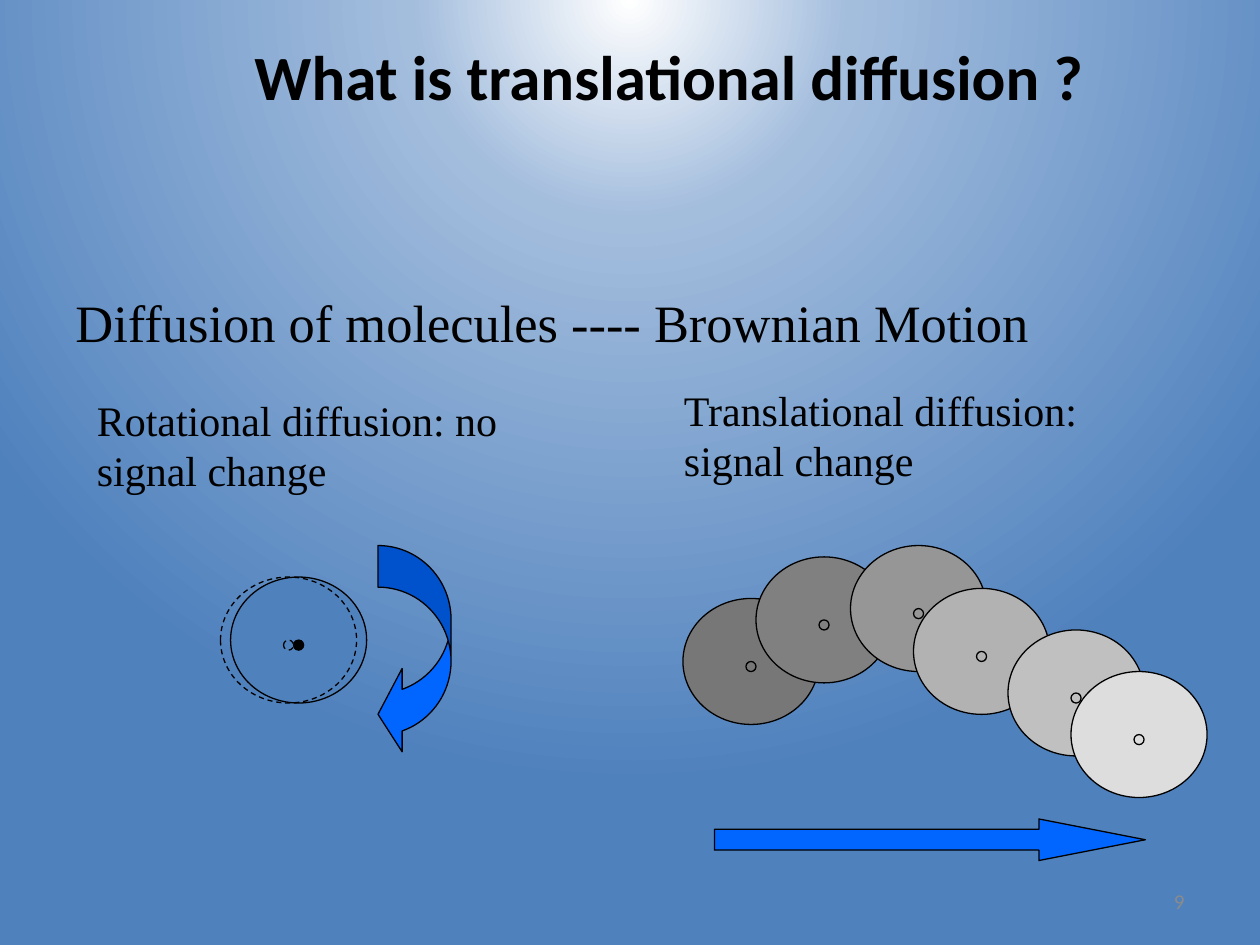
from pptx import Presentation
from pptx.dml.color import RGBColor
from pptx.enum.dml import MSO_LINE
from pptx.enum.shapes import MSO_SHAPE
from pptx.enum.text import MSO_ANCHOR, PP_ALIGN
from pptx.oxml import parse_xml
from pptx.oxml.ns import nsdecls
from pptx.util import Inches, Pt

ELLIPSE = MSO_SHAPE.OVAL
RIGHT_ARROW = MSO_SHAPE.RIGHT_ARROW
CURVED_ARROW = MSO_SHAPE.CURVED_LEFT_ARROW
DASH = MSO_LINE.DASH
LEFT, CENTER, RIGHT = PP_ALIGN.LEFT, PP_ALIGN.CENTER, PP_ALIGN.RIGHT
TOP, MIDDLE = MSO_ANCHOR.TOP, MSO_ANCHOR.MIDDLE

COLORS = {
    "black": "000000",
    "white": "FFFFFF",
    "pale": "A3BDDD",
    "blue": "4F81BD",
    "arrow": "0066FF",
    "number": "8B8B8B",
}
HEADING_FONT = "Calibri"
BODY_FONT = "Times New Roman"

TRANSLATION_STEPS = [
    (5.42, 4.75, "777777"),
    (6, 4.42, "808080"),
    (6.75, 4.33, "969696"),
    (7.25, 4.67, "B2B2B2"),
    (8, 5, "C0C0C0"),
    (8.5, 5.33, "DDDDDD"),
]


def set_background(slide):
    stops = [(0, "white"), (28, "pale"), (100, "blue")]
    stop_xml = "".join(
        f'<a:gs pos="{position * 1000}"><a:srgbClr val="{COLORS[name]}"/></a:gs>'
        for position, name in stops
    )
    background = parse_xml(
        f'<p:bg {nsdecls("p", "a")}><p:bgPr><a:gradFill rotWithShape="1">'
        f"<a:gsLst>{stop_xml}</a:gsLst>"
        '<a:path path="circle">'
        '<a:fillToRect l="50000" t="-80000" r="50000" b="180000"/></a:path>'
        "</a:gradFill><a:effectLst/></p:bgPr></p:bg>"
    )
    slide.element.cSld.insert(0, background)


def add_text(slide, box, text, size, font=BODY_FONT, color="black",
             bold=False, align=LEFT, anchor=TOP):
    frame = slide.shapes.add_textbox(*map(Inches, box)).text_frame
    frame.word_wrap = True
    frame.vertical_anchor = anchor
    paragraph = frame.paragraphs[0]
    paragraph.alignment = align
    run = paragraph.add_run()
    run.text = text
    run.font.size = Pt(size)
    run.font.name = font
    run.font.bold = bold
    run.font.color.rgb = RGBColor.from_string(COLORS[color])


def add_outlined(shapes, kind, box, fill=None, dash=None, adjustments=()):
    shape = shapes.add_shape(kind, *map(Inches, box))
    shape.shadow.inherit = False
    for index, value in enumerate(adjustments):
        shape.adjustments[index] = value
    if fill:
        shape.fill.solid()
        shape.fill.fore_color.rgb = RGBColor.from_string(fill)
    else:
        shape.fill.background()
    shape.line.color.rgb = RGBColor.from_string(COLORS["black"])
    shape.line.width = Pt(0.75)
    if dash:
        shape.line.dash_style = dash


def add_molecule(slide, left, top, body=None, core=None, dash=None):
    molecule = slide.shapes.add_group_shape().shapes
    add_outlined(molecule, ELLIPSE, (left, top, 1.08, 1), body, dash)
    add_outlined(molecule, ELLIPSE, (left + 0.5, top + 0.5, 0.08, 0.08), core, dash)


def add_translation(slide):
    for left, top, shade in TRANSLATION_STEPS:
        add_molecule(slide, left, top, shade, shade)
    add_outlined(slide.shapes, RIGHT_ARROW, (5.67, 6.5, 3.42, 0.33),
                 COLORS["arrow"], adjustments=(0.5, 2.56))
    add_text(slide, (5.33, 3, 3.92, 0.91),
             "Translational diffusion: signal change", 24)


def add_rotation(slide):
    add_molecule(slide, 1.83, 4.58, COLORS["blue"], COLORS["black"])
    add_molecule(slide, 1.75, 4.58, dash=DASH)
    add_outlined(slide.shapes, CURVED_ARROW, (3, 4.33, 0.58, 1.67),
                 COLORS["arrow"], adjustments=(0.57, 1.14, 0.33))
    add_text(slide, (0.67, 3.08, 3.92, 0.91),
             "Rotational diffusion: no signal change", 24)


def main():
    deck = Presentation()
    deck.slide_width, deck.slide_height = Inches(10), Inches(7.5)
    slide = deck.slides.add_slide(deck.slide_layouts[6])
    set_background(slide)
    add_text(slide, (1.75, 0, 7.12, 1.2), "What is translational diffusion ?", 36,
             HEADING_FONT, bold=True, align=CENTER, anchor=MIDDLE)
    add_translation(slide)
    add_rotation(slide)
    add_text(slide, (0.5, 2.25, 9.08, 0.6),
             "Diffusion of molecules ---- Brownian Motion", 30)
    add_text(slide, (7.17, 6.95, 2.33, 0.4), "9", 12, HEADING_FONT, "number",
             align=RIGHT, anchor=MIDDLE)
    deck.save("out.pptx")


if __name__ == "__main__":
    main()
